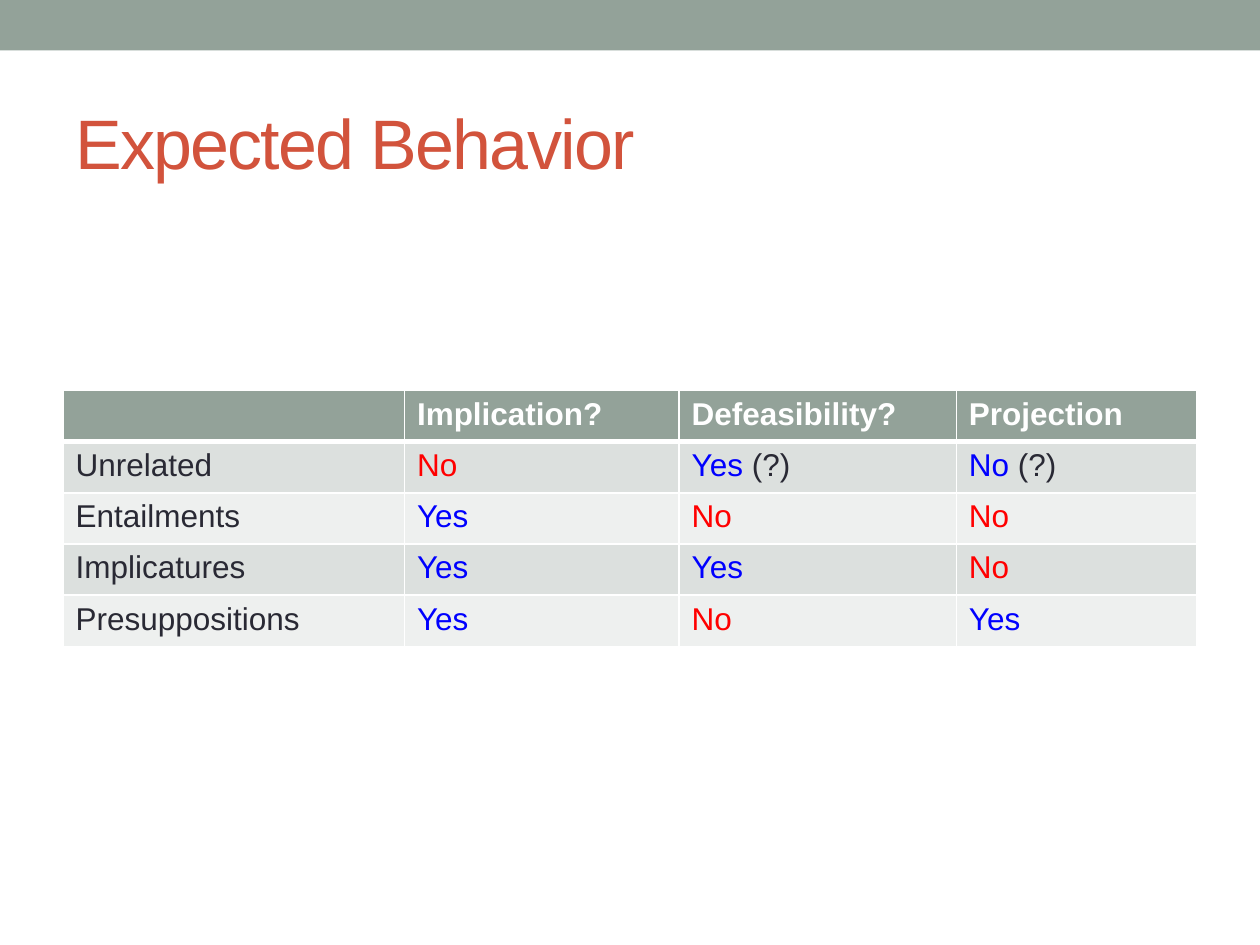
from dataclasses import dataclass

from lxml.etree import SubElement
from pptx import Presentation
from pptx.dml.color import RGBColor as RGB
from pptx.enum.shapes import MSO_SHAPE as SHAPE
from pptx.enum.text import MSO_ANCHOR as ANCHOR
from pptx.oxml.ns import qn
from pptx.util import Pt

PX = 9144  # EMU per px, 100 px to the inch


@dataclass(frozen=True)
class Theme:
    font: str = "Arial"
    title_size: int = 40
    table_size: int = 18
    accent: str = "93A299"
    title: str = "D2533C"
    text: str = "292934"
    white: str = "FFFFFF"
    negative: str = "FF0000"
    positive: str = "0000FF"
    bands: tuple[str, str] = ("DCE0DE", "EEF0EF")


@dataclass(frozen=True)
class Part:
    text: str
    color: str


T = Theme()
Cell = tuple[Part, ...]
YES: Cell = (Part("Yes", T.positive),)
NO: Cell = (Part("No", T.negative),)


def plain(text: str, color: str = T.text) -> Cell:
    return (Part(text, color),)


def unsure(answer: str) -> Cell:
    return (Part(answer + " ", T.positive), Part("(?)", T.text))


HEADER = [plain(label, T.white)
          for label in ("", "Implication?", "Defeasibility?", "Projection")]
BODY = [
    [plain("Unrelated"), NO, unsure("Yes"), unsure("No")],
    [plain("Entailments"), YES, NO, NO],
    [plain("Implicatures"), YES, YES, NO],
    [plain("Presuppositions"), YES, NO, YES],
]
COLUMN_WIDTHS = (271, 218, 220, 191)


def box(*lengths: int) -> list[int]:
    return [n * PX for n in lengths]


def write(p, parts: Cell, size: int, bold: bool = False) -> None:
    p.font.name, p.font.size, p.font.bold = T.font, Pt(size), bold
    for part in parts:
        if part.text:
            r = p.add_run()
            r.text = part.text
            r.font.color.rgb = RGB.from_string(part.color)


def add_border(cell, side: str, width: int) -> None:
    ln = SubElement(cell._tc.get_or_add_tcPr(), qn(f"a:{side}"), w=str(Pt(width)))
    fill = SubElement(ln, qn("a:solidFill"))
    SubElement(fill, qn("a:srgbClr"), val=T.white)


def fill_cell(cell, parts: Cell, row: int) -> None:
    is_header = row == 0
    for side in ("lnL", "lnR", "lnT", "lnB"):
        thick = (is_header and side == "lnB") or (row == 1 and side == "lnT")
        add_border(cell, side, 3 if thick else 1)
    cell.fill.solid()
    color = T.accent if is_header else T.bands[(row - 1) % 2]
    cell.fill.fore_color.rgb = RGB.from_string(color)
    write(cell.text_frame.paragraphs[0], parts, T.table_size, is_header)


def add_band(s) -> None:
    sp = s.shapes.add_shape(SHAPE.RECTANGLE, *box(0, 0, 1000, 40))
    sp.shadow.inherit = False
    sp.fill.solid()
    sp.fill.fore_color.rgb = RGB.from_string(T.accent)
    sp.line.fill.background()


def add_title(s, text: str) -> None:
    tf = s.shapes.add_textbox(*box(50, 58, 900, 108)).text_frame
    tf.word_wrap = True
    tf.vertical_anchor = ANCHOR.MIDDLE
    p = tf.paragraphs[0]
    write(p, plain(text, T.title), T.title_size)
    p.runs[0].font._element.set("spc", "-100")  # tighten by 1 pt


def add_grid(s, rows: list[list[Cell]]) -> None:
    table = s.shapes.add_table(len(rows), len(COLUMN_WIDTHS),
                               *box(50, 310, 900, 203)).table
    for column, width in zip(table.columns, COLUMN_WIDTHS):
        column.width = width * PX
    for i, row in enumerate(rows):
        for j, parts in enumerate(row):
            fill_cell(table.cell(i, j), parts, i)


def main() -> None:
    prs = Presentation()
    prs.slide_width, prs.slide_height = box(1000, 750)
    s = prs.slides.add_slide(prs.slide_layouts[6])
    # Top band and title
    add_band(s)
    add_title(s, "Expected Behavior")
    # Table of expected answers
    add_grid(s, [HEADER, *BODY])
    prs.save("out.pptx")


if __name__ == "__main__":
    main()
